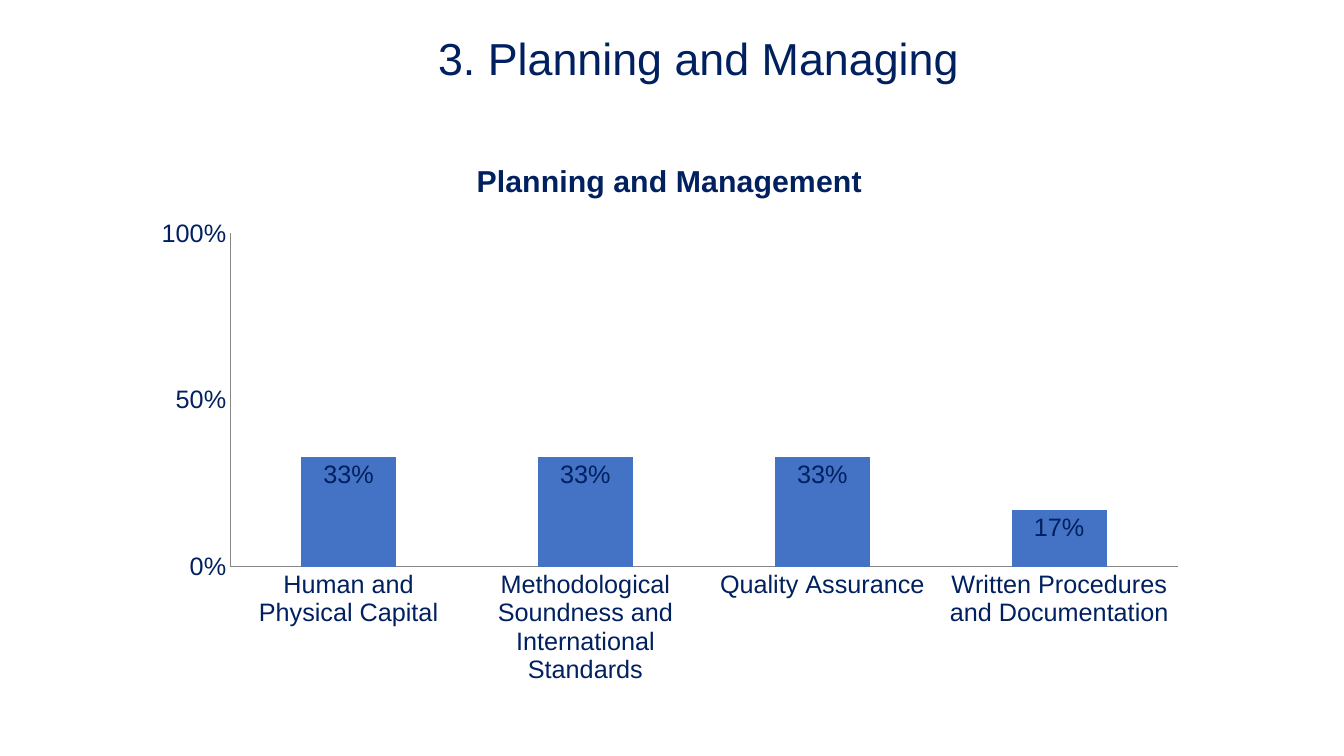
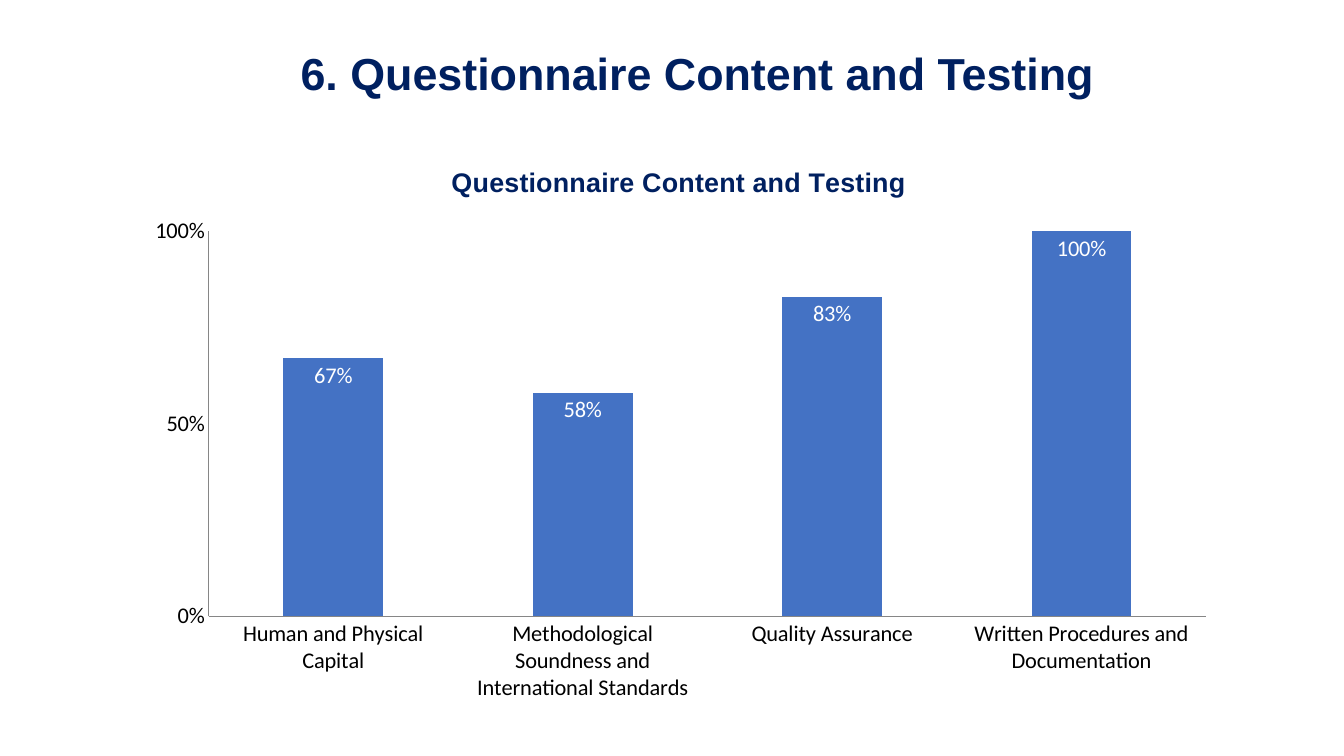
from lxml import etree
from pptx import Presentation
from pptx.chart.data import CategoryChartData
from pptx.dml.color import RGBColor
from pptx.enum.chart import XL_CHART_TYPE, XL_LABEL_POSITION, XL_TICK_MARK
from pptx.enum.text import MSO_ANCHOR, MSO_AUTO_SIZE, PP_ALIGN
from pptx.oxml.ns import qn
from pptx.util import Inches, Pt

COLUMNS = XL_CHART_TYPE.COLUMN_CLUSTERED
INSIDE_END = XL_LABEL_POSITION.INSIDE_END
NO_TICK = XL_TICK_MARK.NONE
MIDDLE = MSO_ANCHOR.MIDDLE
NO_AUTOFIT = MSO_AUTO_SIZE.NONE
CENTER = PP_ALIGN.CENTER

NAVY, BLUE, GREY, BLACK, WHITE = "002060", "4472C4", "868686", "000000", "FFFFFF"
HEADING_FONT = "Arial"
PERCENT = "0%"
TITLE_ONLY = 5
CATEGORIES = [
    "Human and Physical Capital",
    "Methodological Soundness and International Standards",
    "Quality Assurance",
    "Written Procedures and Documentation",
]


def rgb(value):
    return RGBColor.from_string(value)


def style_font(font, size, color, name=HEADING_FONT, bold=False):
    font.size = Pt(size)
    font.color.rgb = rgb(color)
    font.name = name
    font.bold = bold


def place(box):
    return [Inches(length) for length in box]


def set_title(slide, text, box, bold=False):
    title = slide.shapes.title
    title.left, title.top, title.width, title.height = place(box)
    frame = title.text_frame
    frame.text = text
    frame.word_wrap = True
    frame.auto_size = NO_AUTOFIT
    frame.vertical_anchor = MIDDLE
    heading = frame.paragraphs[0]
    heading.alignment = CENTER
    heading.line_spacing = 0.9
    style_font(heading.runs[0].font, 32, NAVY, bold=bold)


def set_plot_area(chart, x, y, w, h):
    plot_area = chart.element.find(qn("c:chart")).find(qn("c:plotArea"))
    for old_layout in plot_area.findall(qn("c:layout")):
        plot_area.remove(old_layout)
    layout = etree.Element(qn("c:layout"))
    manual = etree.SubElement(layout, qn("c:manualLayout"))
    settings = {"layoutTarget": "inner", "xMode": "edge", "yMode": "edge",
                "x": x, "y": y, "w": w, "h": h}
    for tag, value in settings.items():
        etree.SubElement(manual, qn(f"c:{tag}")).set("val", str(value))
    plot_area.insert(0, layout)


def style_axes(chart):
    scale = chart.value_axis
    scale.minimum_scale, scale.maximum_scale = 0, 1
    scale.major_unit = 0.5
    scale.has_major_gridlines = False
    scale.tick_labels.number_format = PERCENT
    scale.tick_labels.number_format_is_linked = False
    for axis in (scale, chart.category_axis):
        axis.major_tick_mark = axis.minor_tick_mark = NO_TICK
        axis.format.line.color.rgb = rgb(GREY)
        axis.format.line.width = Pt(0.75)


def add_percent_chart(slide, heading, shares, box, plot_box, size, color, font, label_color):
    data = CategoryChartData(number_format=PERCENT)
    data.categories = CATEGORIES
    data.add_series("Series 1", shares)
    chart = slide.shapes.add_chart(COLUMNS, *place(box), data).chart
    style_font(chart.font, size, color, font)
    chart.has_legend = False
    chart.has_title = True
    chart.chart_title.include_in_layout = False
    title_frame = chart.chart_title.text_frame
    title_frame.text = heading
    style_font(title_frame.paragraphs[0].runs[0].font, size * 1.2, NAVY, bold=True)
    style_axes(chart)

    plot = chart.plots[0]
    plot.gap_width = 150
    plot.vary_by_categories = False
    bars = plot.series[0].format.fill
    bars.solid()
    bars.fore_color.rgb = rgb(BLUE)
    plot.has_data_labels = True
    labels = plot.data_labels
    labels.show_value = True
    labels.position = INSIDE_END
    labels.number_format = PERCENT
    labels.number_format_is_linked = False
    style_font(labels.font, size, label_color, font)
    set_plot_area(chart, *plot_box)


def main():
    deck = Presentation()
    deck.slide_width, deck.slide_height = Inches(13.33), Inches(7.5)
    layout = deck.slide_layouts[TITLE_ONLY]

    planning = deck.slides.add_slide(layout)
    set_title(planning, "3. Planning and Managing", (1.68, -0.02, 10.5, 1.25))
    add_percent_chart(planning, "Planning and Management", (0.33, 0.33, 0.33, 0.17),
                      (1.39, 1.39, 10.5, 5.51), (0.085, 0.168, 0.895, 0.6),
                      18, NAVY, HEADING_FONT, NAVY)

    testing = deck.slides.add_slide(layout)
    set_title(testing, "6. Questionnaire Content and Testing", (1.67, 0.13, 10.5, 1.25), bold=True)
    add_percent_chart(testing, "Questionnaire Content and Testing", (0.67, 0.58, 0.83, 1),
                      (1.31, 1.41, 10.85, 5.67), (0.07, 0.156, 0.912, 0.674),
                      16, BLACK, "Calibri", WHITE)

    deck.save("out.pptx")


if __name__ == "__main__":
    main()
